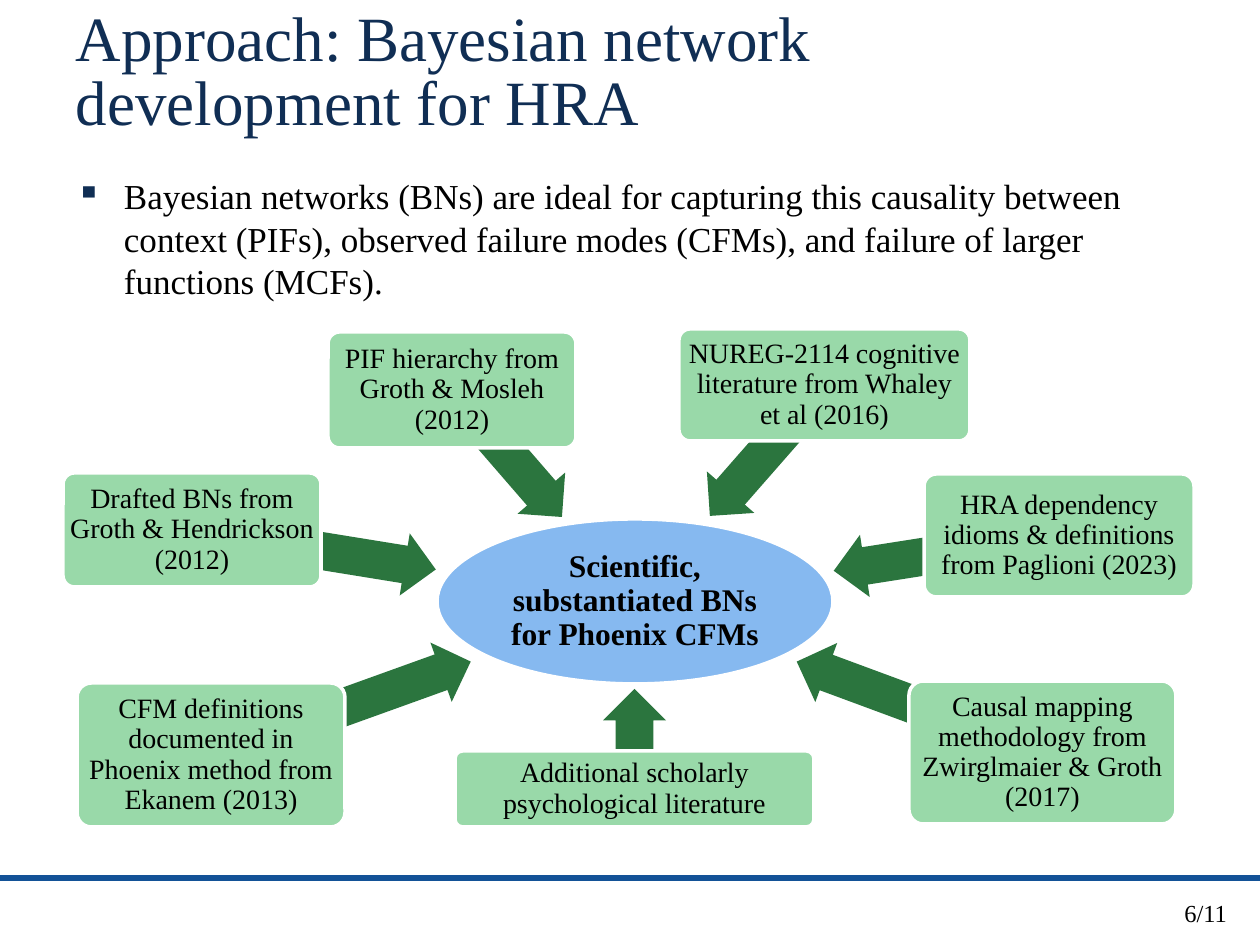
import math

import lxml.etree
import pptx
import pptx.dml.color
import pptx.enum.shapes
import pptx.enum.text
import pptx.oxml.ns
import pptx.util

RGBColor = pptx.dml.color.RGBColor
Shape = pptx.enum.shapes.MSO_SHAPE
Align = pptx.enum.text.PP_ALIGN
Anchor = pptx.enum.text.MSO_ANCHOR

NAVY = RGBColor(0x10, 0x2E, 0x54)
RULE_BLUE = RGBColor(0x13, 0x52, 0x97)
SKY = RGBColor(0x86, 0xB9, 0xF0)
MINT = RGBColor(0x99, 0xD9, 0xA9)
GREEN = RGBColor(0x2B, 0x75, 0x3E)
BLACK = RGBColor(0, 0, 0)
WHITE = RGBColor(255, 255, 255)

FONT = "Times New Roman"
PX_PER_INCH = 126
SLIDE_SIZE = (1260, 945)
ARROW_THICKNESS = 63
TEXT_INSETS = (13, 6, 13, 6)

TITLE = "Approach: Bayesian network development for HRA"
CLAIM = ("Bayesian networks (BNs) are ideal for capturing this causality between "
         "context (PIFs), observed failure modes (CFMs), and failure of larger "
         "functions (MCFs).")
PAGE = "6/11"
GOAL = ("Scientific, substantiated BNs for Phoenix CFMs", (437, 519, 396, 165))

# Each source: wording, box, arrow rotation in degrees, arrow length
SOURCES = [
    ("CFM definitions documented in Phoenix method from Ekanem (2013)",
     (77, 683, 268, 144), 160.2, 276),
    ("Drafted BNs from Groth & Hendrickson (2012)",
     (63, 473, 258, 114), 189.2, 247),
    ("PIF hierarchy from Groth & Mosleh (2012)",
     (328, 332, 248, 116), 229.1, 168),
    ("NUREG-2114 cognitive literature from Whaley et al (2016)",
     (679, 329, 291, 112), 311.2, 174),
    ("HRA dependency idioms & definitions from Paglioni (2023)",
     (924, 474, 270, 123), 351.1, 228),
    ("Causal mapping methodology from Zwirglmaier & Groth (2017)",
     (909, 681, 267, 143), 20.3, 262),
    ("Additional scholarly psychological literature",
     (455, 751, 359, 76), 90, 100),
]


def emu(px):
    return pptx.util.Emu(round(px * 914400 / PX_PER_INCH))


def apply(target, values):
    for name, value in values.items():
        setattr(target, name, value)


def write(shape, text, size, color=BLACK, bold=False, align=Align.LEFT,
          anchor=Anchor.TOP, spacing=1.0, insets=TEXT_INSETS):
    frame = shape.text_frame
    left, top, right, bottom = map(emu, insets)
    apply(frame, {"word_wrap": True, "vertical_anchor": anchor,
                  "margin_left": left, "margin_top": top,
                  "margin_right": right, "margin_bottom": bottom})
    paragraph = frame.paragraphs[0]
    apply(paragraph, {"alignment": align, "line_spacing": spacing})
    run = paragraph.add_run()
    run.text = text
    apply(run.font, {"name": FONT, "size": pptx.util.Pt(size), "bold": bold})
    run.font.color.rgb = color
    return paragraph


def add_text(slide, box, text, size, **style):
    return write(slide.shapes.add_textbox(*map(emu, box)), text, size, **style)


def add_filled(slide, preset, box, fill, outline=None):
    shape = slide.shapes.add_shape(preset, *map(emu, box))
    shape.shadow.inherit = False
    shape.fill.solid()
    shape.fill.fore_color.rgb = fill
    if outline is None:
        shape.line.fill.background()
    else:
        shape.line.color.rgb = outline
        shape.line.width = pptx.util.Pt(2)
    return shape


def add_bullet(paragraph, mark, color):
    qn = pptx.oxml.ns.qn
    props = paragraph._p.get_or_add_pPr()
    props.set("marL", str(emu(48)))
    props.set("indent", str(emu(-48)))
    bullet_color = lxml.etree.SubElement(props, qn("a:buClr"))
    lxml.etree.SubElement(bullet_color, qn("a:srgbClr"), val=str(color))
    lxml.etree.SubElement(props, qn("a:buChar"), char=mark)


def add_source(slide, text, box, rotation, length):
    left, top, width, height = box
    angle = math.radians(rotation)
    center_x = left + width / 2 - length / 2 * math.cos(angle)
    center_y = top + height / 2 - length / 2 * math.sin(angle)
    arrow = add_filled(slide, Shape.LEFT_ARROW,
                       (center_x - length / 2, center_y - ARROW_THICKNESS / 2,
                        length, ARROW_THICKNESS), GREEN)
    arrow.adjustments[0] = 0.6
    arrow.adjustments[1] = 0.5
    arrow.rotation = rotation
    card = add_filled(slide, Shape.ROUNDED_RECTANGLE, box, MINT, WHITE)
    card.adjustments[0] = 0.1
    write(card, text, 16, align=Align.CENTER, anchor=Anchor.MIDDLE,
          spacing=0.9, insets=(3, 3, 3, 3))


def main():
    deck = pptx.Presentation()
    deck.slide_width, deck.slide_height = map(emu, SLIDE_SIZE)
    slide = deck.slides.add_slide(deck.slide_layouts[6])

    add_filled(slide, Shape.RECTANGLE, (0, 875, 1260, 6), RULE_BLUE)
    add_text(slide, (63, 6, 1062, 136), TITLE, 36, color=NAVY,
             anchor=Anchor.MIDDLE, spacing=0.85)
    claim = add_text(slide, (63, 169, 1134, 150), CLAIM, 20)
    add_bullet(claim, "▪", NAVY)
    add_text(slide, (1155, 892, 85, 42), PAGE, 14, align=Align.RIGHT)

    goal_text, goal_box = GOAL
    goal = add_filled(slide, Shape.OVAL, goal_box, SKY, WHITE)
    write(goal, goal_text, 18, bold=True, align=Align.CENTER,
          anchor=Anchor.MIDDLE, spacing=0.9, insets=(1, 1, 1, 1))
    for source in SOURCES:
        add_source(slide, *source)

    deck.save("out.pptx")


if __name__ == "__main__":
    main()
